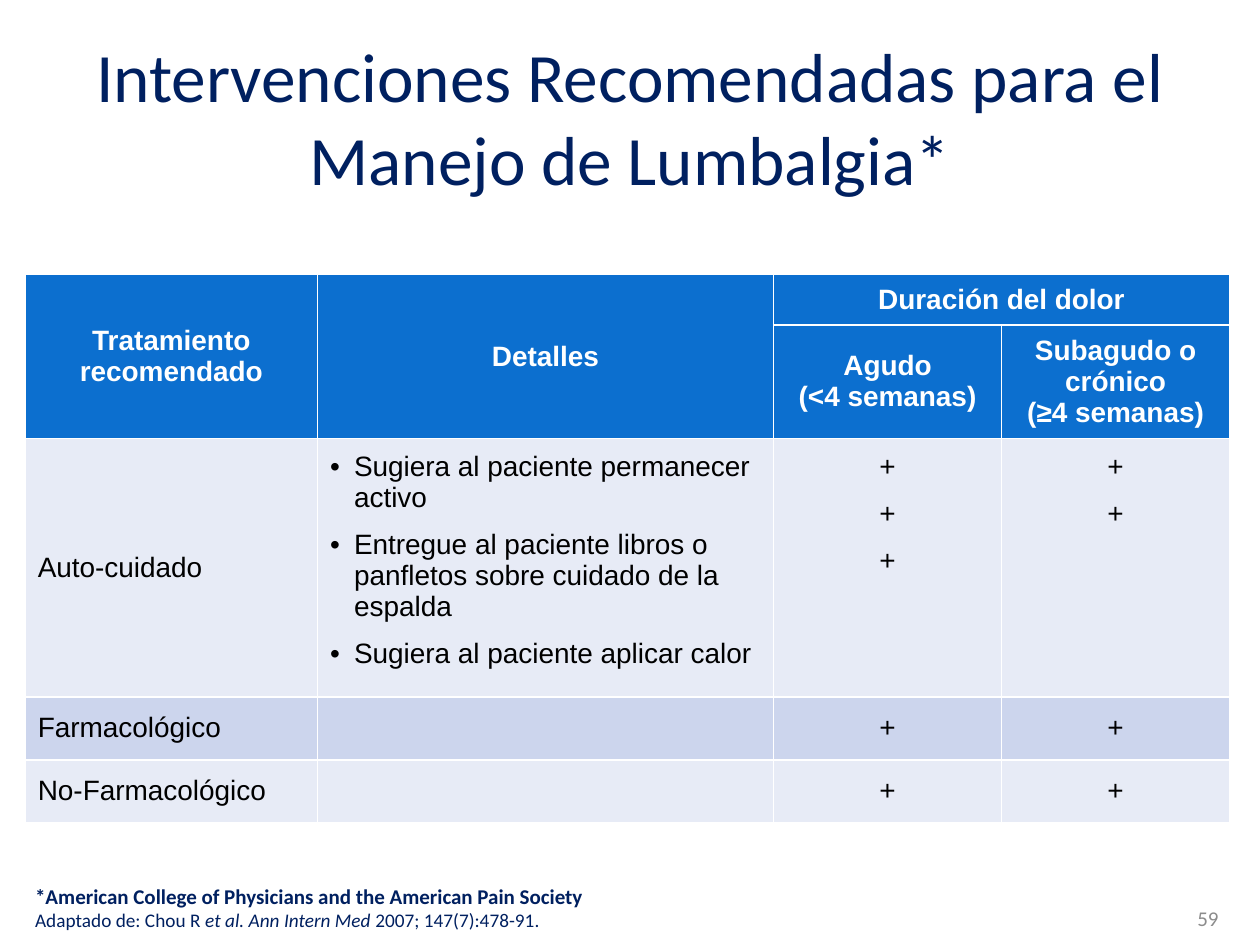
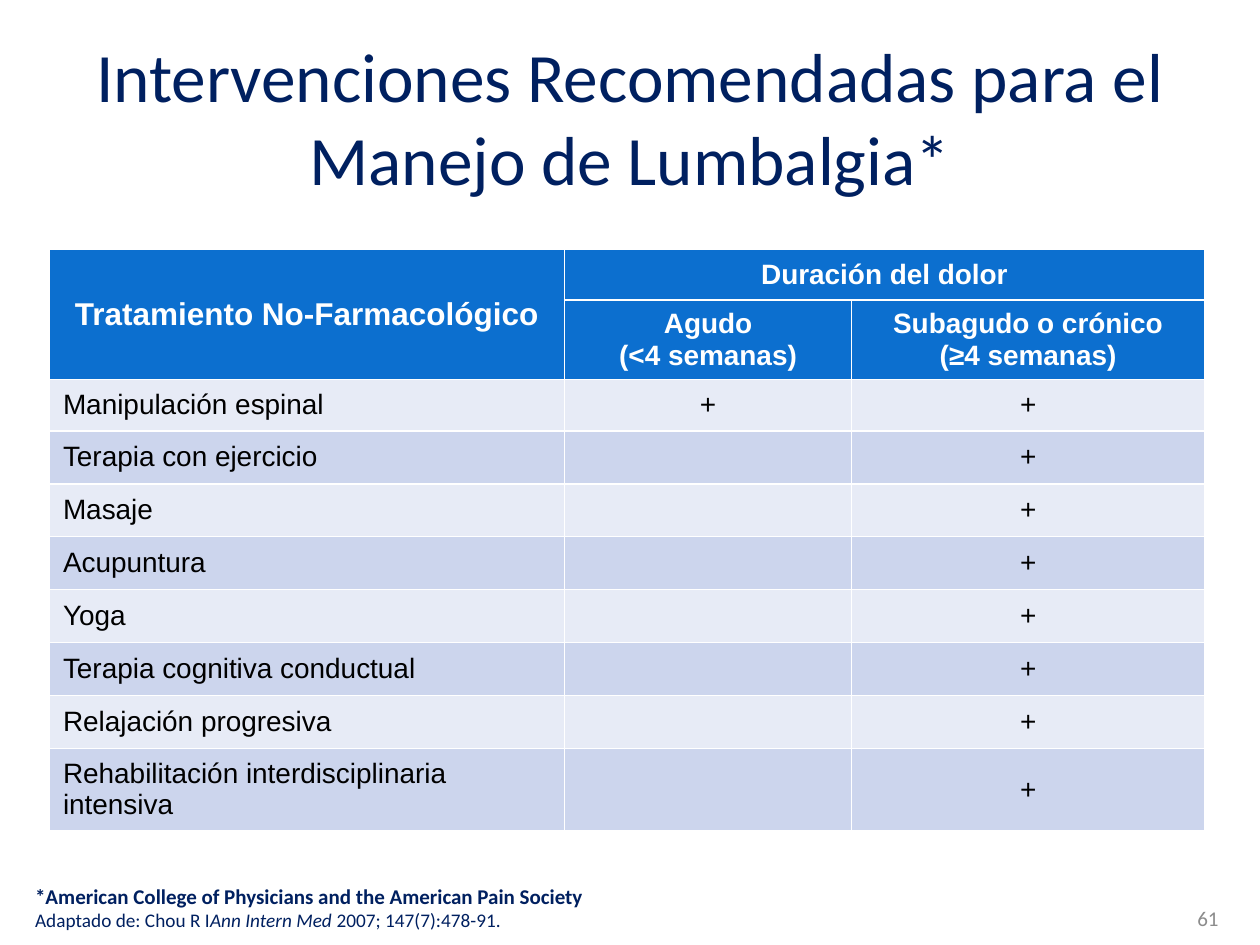
from copy import deepcopy
from dataclasses import dataclass
from typing import Any

from lxml import etree
from pptx import Presentation, util as u
from pptx.dml.color import RGBColor
from pptx.enum import text
from pptx.oxml.ns import qn

NAVY = RGBColor(0x00, 0x20, 0x60)
GRAY = RGBColor(0x8C, 0x8C, 0x8C)
BLUE = RGBColor(0x0C, 0x6F, 0xCF)
PALE = RGBColor(0xE7, 0xEB, 0xF6)
LAVENDER = RGBColor(0xCC, 0xD5, 0xED)
WHITE = RGBColor(0xFF, 0xFF, 0xFF)
BLACK = RGBColor(0x00, 0x00, 0x00)

SLIDE_WIDTH, SLIDE_HEIGHT = u.Inches(10), u.Inches(7.5)
GRID_COLUMNS, GRID_ROWS = 100, 75

LEFT, CENTER, RIGHT = text.PP_ALIGN.LEFT, text.PP_ALIGN.CENTER, text.PP_ALIGN.RIGHT
TOP, MIDDLE = text.MSO_ANCHOR.TOP, text.MSO_ANCHOR.MIDDLE

TITLE_FONT = {"name": "Calibri", "size": 39.6, "color": NAVY}
NUMBER_FONT = {"name": "Calibri", "size": 12, "color": GRAY}
SOURCE_FONT = {"name": "Calibri", "size": 11, "color": NAVY}
SOCIETY_FONT = SOURCE_FONT | {"size": 12, "bold": True}
JOURNAL_FONT = SOURCE_FONT | {"italic": True}
HEADER_FONT = {"name": "Arial", "size": 16, "color": WHITE, "bold": True}
BODY_FONT = {"name": "Arial", "size": 16, "color": BLACK, "bold": False}

TITLE = "Intervenciones Recomendadas para el Manejo de Lumbalgia*"
SOCIETY = "*American College of Physicians and the American Pain Society"
DURATION = "Duración del dolor"
ACUTE = "Agudo\n(<4 semanas)"
HEADER_ROWS = 2
HANGING_INDENT = 0.19


@dataclass(frozen=True)
class Box:
    column: float
    row: float
    columns: float
    rows: float

    def lengths(self) -> tuple[int, int, int, int]:
        return across(self.column), down(self.row), across(self.columns), down(self.rows)


@dataclass(frozen=True)
class Run:
    words: str
    font: dict[str, Any]


@dataclass(frozen=True)
class Cell:
    lines: tuple[str, ...] = ()
    align: Any = CENTER
    anchor: Any = MIDDLE
    bullets: bool = False
    size: float = 16
    row_span: int = 1
    column_span: int = 1


@dataclass(frozen=True)
class Grid:
    column: float
    row: float
    widths: tuple[float, ...]
    heights: tuple[float, ...]
    margins: tuple[float, float]
    cells: list[list[Cell | None]]


@dataclass(frozen=True)
class Page:
    number: str
    grid: Grid
    citation: list[Run]


TITLE_BOX = Box(5, 3, 90, 12.5)
NUMBER_BOX = Box(74.4, 70.9, 23.3, 4)
SOURCE_BOX = Box(1.8, 69.6, 85.2, 4.9)
HEADER_MARGINS = (1, 0.5)


def across(columns: float) -> int:
    return round(SLIDE_WIDTH * columns / GRID_COLUMNS)


def down(rows: float) -> int:
    return round(SLIDE_HEIGHT * rows / GRID_ROWS)


def apply(target: Any, values: dict[str, Any]) -> None:
    for name, value in values.items():
        setattr(target, name, value)


def add_run(paragraph: Any, run: Run) -> None:
    first, *others = run.words.split("\n")
    for index, words in enumerate([first, *others]):
        if index:
            paragraph.add_line_break()
        piece = paragraph.add_run()
        piece.text = words
        values = dict(run.font)
        piece.font.color.rgb = values.pop("color")
        apply(piece.font, values | {"size": u.Pt(values["size"])})
    for line_break in paragraph._p.findall(qn("a:br")):
        line_break.append(deepcopy(piece._r.rPr))


def fill_frame(frame: Any, paragraphs: list[list[Run]], align: Any) -> list[Any]:
    for index, runs in enumerate(paragraphs):
        paragraph = frame.add_paragraph() if index else frame.paragraphs[0]
        paragraph.alignment = align
        for run in runs:
            add_run(paragraph, run)
    return list(frame.paragraphs)


def add_text(slide: Any, box: Box, paragraphs: list[list[Run]],
             align: Any = LEFT, anchor: Any = TOP) -> None:
    frame = slide.shapes.add_textbox(*box.lengths()).text_frame
    apply(frame, {"word_wrap": True, "vertical_anchor": anchor})
    fill_frame(frame, paragraphs, align)


def add_bullet(paragraph: Any) -> None:
    properties = paragraph._p.get_or_add_pPr()
    indent = u.Inches(HANGING_INDENT)
    properties.set("marL", str(indent))
    properties.set("indent", str(-indent))
    etree.SubElement(properties, qn("a:buFont"), typeface="Arial")
    etree.SubElement(properties, qn("a:buChar"), char="•")


def add_borders(cell: Any) -> None:
    properties = cell._tc.get_or_add_tcPr()
    for side in ("lnL", "lnR", "lnT", "lnB"):
        line = etree.SubElement(properties, qn(f"a:{side}"), w=str(u.Pt(1)))
        fill = etree.SubElement(line, qn("a:solidFill"))
        etree.SubElement(fill, qn("a:srgbClr"), val=str(WHITE))


def draw_cell(target: Any, cell: Cell, header: bool, margins: tuple[float, float]) -> None:
    side, edge = across(margins[0]), down(margins[1])
    apply(target, {"margin_left": side, "margin_right": side, "margin_top": edge,
                   "margin_bottom": edge, "vertical_anchor": cell.anchor})
    font = (HEADER_FONT if header else BODY_FONT) | {"size": cell.size}
    paragraphs = fill_frame(target.text_frame, [[Run(line, font)] for line in cell.lines], cell.align)
    for index, paragraph in enumerate(paragraphs):
        if len(paragraphs) > 1:
            apply(paragraph, {"space_before": u.Pt(3 if index else 0), "space_after": u.Pt(6)})
        if cell.bullets:
            add_bullet(paragraph)


def add_grid(slide: Any, grid: Grid) -> None:
    box = Box(grid.column, grid.row, sum(grid.widths), sum(grid.heights))
    table = slide.shapes.add_table(len(grid.heights), len(grid.widths), *box.lengths()).table
    for column, width in zip(table.columns, grid.widths):
        column.width = across(width)
    for row, height in zip(table.rows, grid.heights):
        row.height = down(height)
    for row_index, cells in enumerate(grid.cells):
        header = row_index < HEADER_ROWS
        color = BLUE if header else (PALE, LAVENDER)[(row_index - HEADER_ROWS) % 2]
        for column_index, cell in enumerate(cells):
            target = table.cell(row_index, column_index)
            add_borders(target)
            target.fill.solid()
            target.fill.fore_color.rgb = color
            if cell is None:
                continue
            if cell.row_span * cell.column_span > 1:
                target.merge(table.cell(row_index + cell.row_span - 1,
                                        column_index + cell.column_span - 1))
            draw_cell(target, cell, header, HEADER_MARGINS if header else grid.margins)


def add_page(presentation: Any, page: Page) -> None:
    slide = presentation.slides.add_slide(presentation.slide_layouts[6])
    add_text(slide, TITLE_BOX, [[Run(TITLE, TITLE_FONT)]], CENTER, MIDDLE)
    add_text(slide, NUMBER_BOX, [[Run(page.number, NUMBER_FONT)]], RIGHT, MIDDLE)
    add_grid(slide, page.grid)
    add_text(slide, SOURCE_BOX, [[Run(SOCIETY, SOCIETY_FONT)], page.citation])


def label(words: str) -> Cell:
    return Cell((words,), LEFT)


def marks(count: int, anchor: Any = MIDDLE) -> Cell:
    return Cell(("+",) * count, anchor=anchor)


def heading(words: str, size: float = 16) -> Cell:
    return Cell((words,), size=size, row_span=HEADER_ROWS)


DURATION_CELL = Cell((DURATION,), column_span=2)
ADVICE = (
    "Sugiera al paciente permanecer activo",
    "Entregue al paciente libros o panfletos sobre cuidado de la espalda",
    "Sugiera al paciente aplicar calor",
)
THERAPIES = {
    "Manipulación espinal": 1,
    "Terapia con ejercicio": 0,
    "Masaje": 0,
    "Acupuntura": 0,
    "Yoga": 0,
    "Terapia cognitiva conductual": 0,
    "Relajación progresiva": 0,
    "Rehabilitación interdisciplinaria intensiva": 0,
}

TREATMENTS = Grid(
    2, 21.8, (23.2, 36.2, 18.1, 18.1), (4, 8.4, 19.3, 4.5, 4.5), (1, 1),
    [
        [heading("Tratamiento recomendado"), heading("Detalles"), DURATION_CELL, None],
        [None, None, Cell((ACUTE,)), Cell(("Subagudo o crónico\n(≥4 semanas)",))],
        [label("Auto-cuidado"), Cell(ADVICE, LEFT, TOP, True), marks(3, TOP), marks(2, TOP)],
        *[[label(name), Cell(), marks(1), marks(1)]
          for name in ("Farmacológico", "No-Farmacológico")],
    ],
)
NON_DRUG = Grid(
    3.9, 19.8, (40.9, 22.8, 28), (4, 5.9, *[4.06] * 7, 6), (1.1, 0.6),
    [
        [heading("Tratamiento No-Farmacológico", 18), DURATION_CELL, None],
        [None, Cell((ACUTE,)), Cell(("Subagudo o crónico\n(≥4 semanas)",))],
        *[[label(name), marks(acute), marks(1)] for name, acute in THERAPIES.items()],
    ],
)
REFERENCE = Run("2007; 147(7):478-91.", SOURCE_FONT)
PAGES = [
    Page("59", TREATMENTS, [Run("Adaptado de: Chou R ", SOURCE_FONT),
                            Run("et al. Ann Intern Med ", JOURNAL_FONT), REFERENCE]),
    Page("61", NON_DRUG, [Run("Adaptado de: Chou R I", SOURCE_FONT),
                          Run("Ann Intern Med ", JOURNAL_FONT), REFERENCE]),
]


def main() -> None:
    presentation = Presentation()
    apply(presentation, {"slide_width": SLIDE_WIDTH, "slide_height": SLIDE_HEIGHT})
    for page in PAGES:
        add_page(presentation, page)
    presentation.save("out.pptx")


if __name__ == "__main__":
    main()
